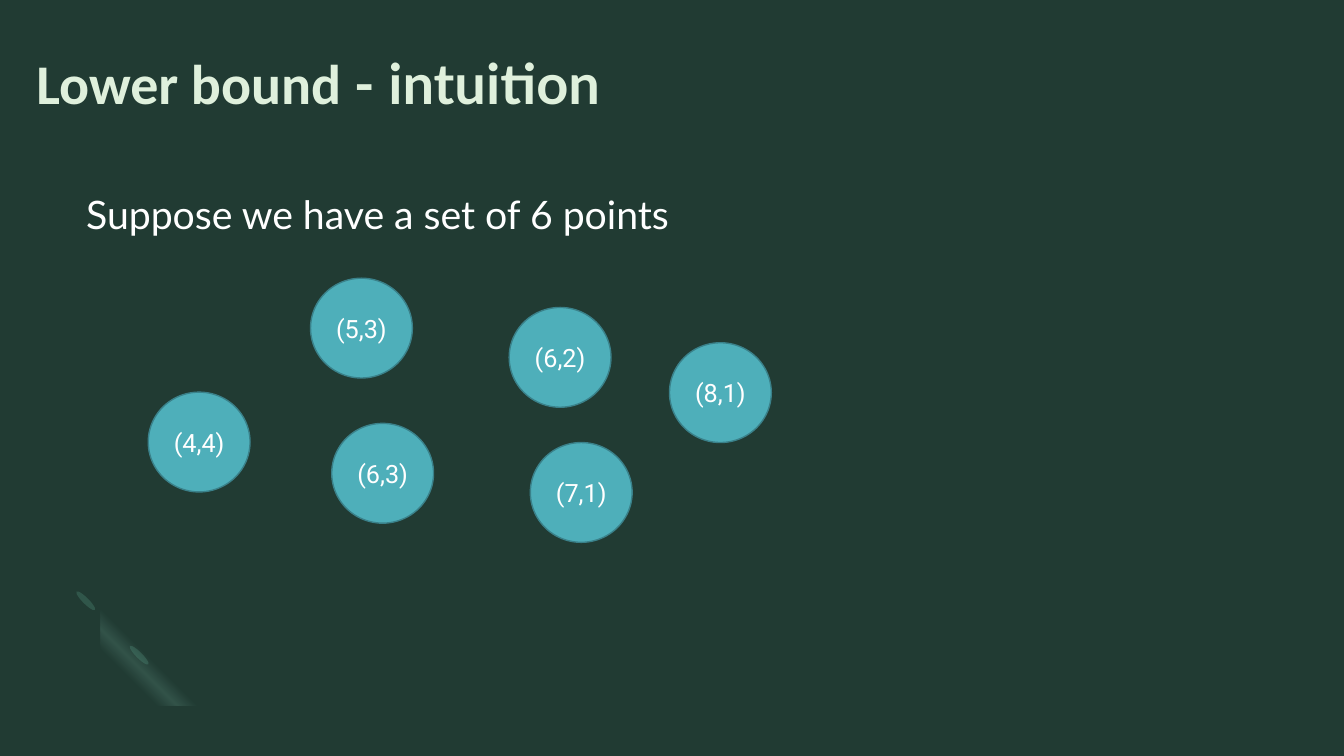
from dataclasses import dataclass

from lxml.etree import SubElement
from pptx import Presentation
from pptx.dml.color import RGBColor
from pptx.enum.shapes import MSO_SHAPE
from pptx.enum.text import MSO_ANCHOR, MSO_AUTO_SIZE, PP_ALIGN
from pptx.oxml.ns import qn
from pptx.util import Inches, Pt

TITLE = [("Lower bound ", "Calibri"), ("- intuition", "Lato")]
INTRO = "Suppose we have a set of 6 points"
POINTS = [  # label, left, top
    ("(4,4)", 1.47, 3.89),
    ("(5,3)", 3.08, 2.76),
    ("(6,3)", 3.29, 4.2),
    ("(6,2)", 5.05, 3.05),
    ("(7,1)", 5.26, 4.39),
    ("(8,1)", 6.64, 3.4),
]
POINT_SIZE = (1.01, 0.99)
RING_ENDS = [(1.35, 6.37), (0.82, 5.83)]
RING_END_SIZE = (0.06, 0.26)
RING_CURVES = [  # four control points each
    [(0.76, 6.59), (0.56, 6.39), (0.58, 6.05), (0.81, 5.82)],
    [(0.99, 6), (0.87, 6.11), (0.86, 6.29), (0.96, 6.38)],
    [(0.96, 6.38), (1.06, 6.48), (1.23, 6.47), (1.35, 6.36)],
    [(1.52, 6.54), (1.3, 6.76), (0.95, 6.79), (0.76, 6.59)],
]
RING_STOPS = [(0, 0), (52, 0), (62, 20), (72, 0), (100, 0)]  # position %, opacity %
CURVE_STEPS = 12


@dataclass(frozen=True)
class Theme:
    background: str = "213B33"
    title: str = "DFF0DC"
    text: str = "FFFFFF"
    point: str = "4EAFBA"
    point_line: str = "3A818A"
    ring_end: str = "30564A"
    ring: str = "79B4A2"
    title_size: int = 40
    intro_size: int = 28
    point_size: int = 18


THEME = Theme()


def color(code):
    return RGBColor.from_string(code)


def set_font(paragraph, name, size, code):
    paragraph.font.name = name
    paragraph.font.size = Pt(size)
    paragraph.font.color.rgb = color(code)


def add_ellipse(page, left, top, size, fill):
    ellipse = page.shapes.add_shape(
        MSO_SHAPE.OVAL, *map(Inches, (left, top, *size)))
    ellipse.shadow.inherit = False
    ellipse.fill.solid()
    ellipse.fill.fore_color.rgb = color(fill)
    ellipse.line.fill.background()
    return ellipse


def curve_points(controls):
    """Sample a cubic Bezier curve, both ends included."""
    for step in range(CURVE_STEPS + 1):
        t = step / CURVE_STEPS
        weights = ((1 - t) ** 3, 3 * t * (1 - t) ** 2, 3 * t * t * (1 - t), t ** 3)
        yield tuple(sum(w * value for w, value in zip(weights, axis))
                    for axis in zip(*controls))


def add_ring(page):
    """Open ring whose fill shows only as a faint diagonal glow."""
    for left, top in RING_ENDS:
        add_ellipse(page, left, top, RING_END_SIZE, THEME.ring_end).rotation = 135
    outline = [point for curve in RING_CURVES for point in curve_points(curve)]
    builder = page.shapes.build_freeform(*outline[0], scale=Inches(1))
    builder.add_line_segments(outline[1:], close=True)
    ring = builder.convert_to_shape()
    ring.shadow.inherit = False
    ring.line.fill.background()
    ring.fill.gradient()
    gradient = ring.fill._fill._gradFill
    stops = gradient.find(qn("a:gsLst"))
    stops.clear()
    for position, opacity in RING_STOPS:
        stop = SubElement(stops, qn("a:gs"), pos=str(position * 1000))
        tint = SubElement(stop, qn("a:srgbClr"), val=THEME.ring)
        SubElement(tint, qn("a:alpha"), val=str(opacity * 1000))
    direction = gradient.find(qn("a:lin"))
    direction.set("ang", str(135 * 60000))
    direction.set("scaled", "0")


def add_title(page):
    title = page.shapes.title
    title.left, title.top, title.width, title.height = map(
        Inches, (0.26, 0.43, 11.6, 0.77))
    frame = title.text_frame
    frame.vertical_anchor = MSO_ANCHOR.TOP
    frame.auto_size = MSO_AUTO_SIZE.SHAPE_TO_FIT_TEXT
    para = frame.paragraphs[0]
    para.alignment = PP_ALIGN.LEFT
    para.font.size = Pt(THEME.title_size)
    para.font.bold = True
    para.font.color.rgb = color(THEME.title)
    for text, font in TITLE:
        span = para.add_run()
        span.text = text
        span.font.name = font


def add_intro(page):
    box = page.shapes.add_textbox(*map(Inches, (0.41, 1.84, 6.67, 0.57)))
    frame = box.text_frame
    frame.word_wrap = True
    frame.auto_size = MSO_AUTO_SIZE.SHAPE_TO_FIT_TEXT
    para = frame.paragraphs[0]
    para.text = INTRO
    para.alignment = PP_ALIGN.CENTER
    set_font(para, "Lato", THEME.intro_size, THEME.text)


def add_point(page, label, left, top):
    point = add_ellipse(page, left, top, POINT_SIZE, THEME.point)
    point.line.color.rgb = color(THEME.point_line)
    point.line.width = Pt(1)
    point.text_frame.vertical_anchor = MSO_ANCHOR.MIDDLE
    para = point.text_frame.paragraphs[0]
    para.text = label
    para.alignment = PP_ALIGN.CENTER
    set_font(para, "Roboto", THEME.point_size, THEME.text)


def main():
    deck = Presentation()
    deck.slide_width, deck.slide_height = Inches(13.33), Inches(7.5)
    page = deck.slides.add_slide(deck.slide_layouts[5])
    page.background.fill.solid()
    page.background.fill.fore_color.rgb = color(THEME.background)
    add_ring(page)
    add_intro(page)
    add_title(page)
    for point in POINTS:
        add_point(page, *point)
    deck.save("out.pptx")


if __name__ == "__main__":
    main()
